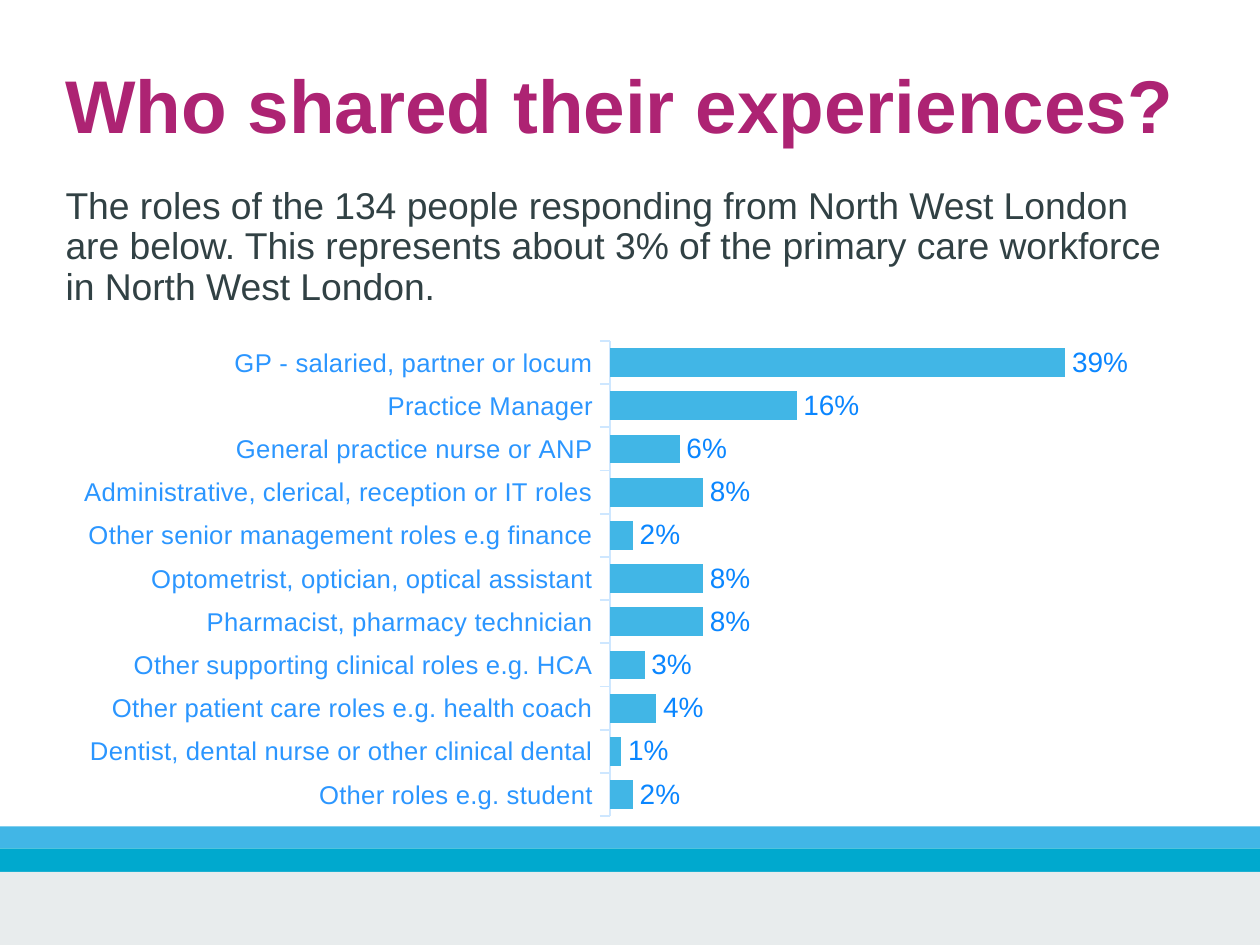
from dataclasses import dataclass

from lxml import etree
from pptx import Presentation
from pptx.chart.data import CategoryChartData
from pptx.dml.color import RGBColor
from pptx.enum import chart as chart_enum, shapes, text
from pptx.oxml.ns import qn
from pptx.util import Inches, Pt

TITLE = "Who shared their experiences?"
INTRO = (
    "The roles of the 134 people responding from North West London are below. "
    "This represents about 3% of the primary care workforce in North West London."
)
ROLES = [
    ("GP - salaried, partner or locum", 39),
    ("Practice Manager", 16),
    ("General practice nurse or ANP", 6),
    ("Administrative, clerical, reception or IT roles", 8),
    ("Other senior management roles e.g finance", 2),
    ("Optometrist, optician, optical assistant", 8),
    ("Pharmacist, pharmacy technician", 8),
    ("Other supporting clinical roles e.g. HCA", 3),
    ("Other patient care roles e.g. health coach", 4),
    ("Dentist, dental nurse or other clinical dental", 1),
    ("Other roles e.g. student", 2),
]


@dataclass(frozen=True)
class Theme:
    font: str = "Arial"
    title: str = "AD2373"
    body: str = "314144"
    bar: str = "41B6E6"
    teal: str = "00A9CE"
    footer: str = "E8ECED"
    axis: str = "CEE7FF"
    category: str = "2B96FF"
    value: str = "0A86FF"
    title_size: int = 32
    body_size: int = 16
    value_size: int = 12
    category_size: int = 11


THEME = Theme()
SLIDE_WIDTH = 7.5
SLIDE_HEIGHT = SLIDE_WIDTH * 3 / 4
FOOTER_BANDS = [(4.92, THEME.bar), (5.05, THEME.teal), (5.19, THEME.footer)]
CHART_BOX = (0.2, 1.93, 6.9, 2.98)
PLOT_BOX = (3.63, 2.03, 3.13, 2.83)
AXIS_MAXIMUM = 45


def style_font(font, size, color, bold=False):
    font.name = THEME.font
    font.size = Pt(size)
    font.bold = bold
    font.color.rgb = RGBColor.from_string(color)


def fill_placeholder(shape, box, words, top_inset, size, color, bold=False):
    shape.left, shape.top, shape.width, shape.height = map(Inches, box)
    frame = shape.text_frame
    frame.text = words
    frame.word_wrap = True
    frame.auto_size = text.MSO_AUTO_SIZE.NONE
    frame.vertical_anchor = text.MSO_ANCHOR.TOP
    frame.margin_left = frame.margin_right = frame.margin_bottom = 0
    frame.margin_top = Inches(top_inset)
    paragraph = frame.paragraphs[0]
    paragraph.alignment = text.PP_ALIGN.LEFT
    paragraph.space_before = Pt(0)
    style_font(paragraph.runs[0].font, size, color, bold)
    return paragraph


def remove_bullet(paragraph):
    properties = paragraph._p.get_or_add_pPr()
    properties.set("marL", "0")
    properties.set("indent", "0")
    etree.SubElement(properties, qn("a:buNone"))


def add_footer_bands(slide):
    bottoms = [top for top, _ in FOOTER_BANDS[1:]] + [SLIDE_HEIGHT]
    for (top, color), bottom in zip(FOOTER_BANDS, bottoms):
        band = slide.shapes.add_shape(
            shapes.MSO_SHAPE.RECTANGLE,
            0, Inches(top), Inches(SLIDE_WIDTH), Inches(bottom - top),
        )
        band.shadow.inherit = False
        band.fill.solid()
        band.fill.fore_color.rgb = RGBColor.from_string(color)
        band.line.fill.background()


def place_plot(chart):
    """Fix the inner plot area as fractions of the chart frame."""
    left, top, width, height = CHART_BOX
    plot_left, plot_top, plot_width, plot_height = PLOT_BOX
    plot_area = chart._chartSpace.chart.plotArea
    for old_layout in plot_area.findall(qn("c:layout")):
        plot_area.remove(old_layout)
    layout = etree.Element(qn("c:layout"))
    plot_area.insert(0, layout)
    manual = etree.SubElement(layout, qn("c:manualLayout"))
    settings = [
        ("layoutTarget", "inner"), ("xMode", "edge"), ("yMode", "edge"),
        ("x", (plot_left - left) / width), ("y", (plot_top - top) / height),
        ("w", plot_width / width), ("h", plot_height / height),
    ]
    for name, value in settings:
        etree.SubElement(manual, qn(f"c:{name}")).set("val", str(value))


def add_roles_chart(slide):
    data = CategoryChartData(number_format='0"%"')
    data.categories = [role for role, _ in ROLES]
    data.add_series("%", [share for _, share in ROLES])
    chart = slide.shapes.add_chart(
        chart_enum.XL_CHART_TYPE.BAR_CLUSTERED, *map(Inches, CHART_BOX), data
    ).chart
    chart.has_legend = False
    chart.has_title = False
    style_font(chart.font, THEME.category_size, THEME.category)
    place_plot(chart)

    roles_axis = chart.category_axis
    roles_axis.reverse_order = True
    roles_axis.major_tick_mark = chart_enum.XL_TICK_MARK.OUTSIDE
    roles_axis.format.line.color.rgb = RGBColor.from_string(THEME.axis)
    roles_axis.format.line.width = Pt(0.75)
    style_font(roles_axis.tick_labels.font, THEME.category_size, THEME.category)

    share_axis = chart.value_axis
    share_axis.minimum_scale = 0
    share_axis.maximum_scale = AXIS_MAXIMUM
    share_axis.has_major_gridlines = False
    share_axis.visible = False

    plot = chart.plots[0]
    plot.gap_width = 50
    plot.vary_by_categories = False
    bars = plot.series[0]
    bars.invert_if_negative = False
    bars.format.fill.solid()
    bars.format.fill.fore_color.rgb = RGBColor.from_string(THEME.bar)
    plot.has_data_labels = True
    labels = plot.data_labels
    labels.show_value = True
    labels.number_format = '0"%"'
    labels.number_format_is_linked = False
    labels.position = chart_enum.XL_LABEL_POSITION.OUTSIDE_END
    style_font(labels.font, THEME.value_size, THEME.value)


def main():
    presentation = Presentation()
    presentation.slide_width = Inches(SLIDE_WIDTH)
    presentation.slide_height = Inches(SLIDE_HEIGHT)
    slide = presentation.slides.add_slide(presentation.slide_layouts[1])

    fill_placeholder(slide.shapes.title, (0.39, 0.33, 6.7, 0.56), TITLE,
                     0.02, THEME.title_size, THEME.title, bold=True)
    intro = fill_placeholder(slide.placeholders[1], (0.39, 1.07, 6.57, 0.77), INTRO,
                             0.04, THEME.body_size, THEME.body)
    intro.line_spacing = Pt(17.3)
    remove_bullet(intro)
    add_footer_bands(slide)
    add_roles_chart(slide)
    presentation.save("out.pptx")


if __name__ == "__main__":
    main()
